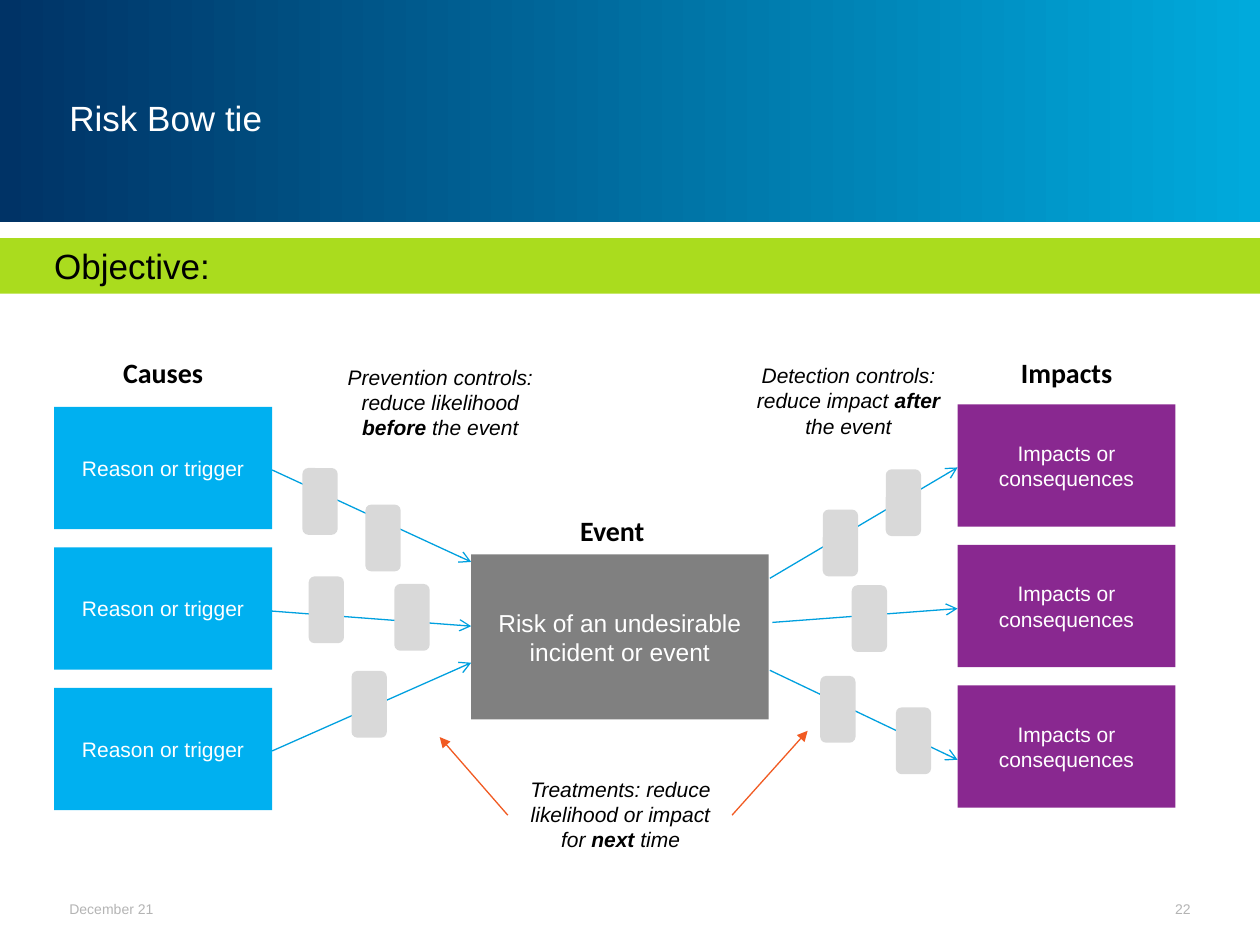
import pptx
import pptx.dml.color
import pptx.enum.shapes
import pptx.enum.text
import pptx.oxml
import pptx.oxml.ns
import pptx.util
from pptx.util import Inches

COLORS = {
    "navy": "003366", "sky": "00AADC", "lime": "AADC1E", "cause": "00B0F0",
    "impact": "892890", "event": "808080", "control": "D9D9D9", "flow": "00A0DF",
    "treatment": "F15A22", "footer": "B4B4B4", "white": "FFFFFF", "black": "000000",
}
ALIGN = pptx.enum.text.PP_ALIGN
ANCHOR = pptx.enum.text.MSO_ANCHOR
SHAPE = pptx.enum.shapes.MSO_SHAPE


def rgb(name):
    return pptx.dml.color.RGBColor.from_string(COLORS[name])


def write_text(shape, text, size=12, color="black", font="Arial", bold=False, italic=False,
               align=ALIGN.LEFT, anchor=ANCHOR.TOP, insets=(0.1, 0.05, 0.1, 0.05)):
    frame = shape.text_frame
    frame.word_wrap = True
    frame.vertical_anchor = anchor
    (frame.margin_left, frame.margin_top,
     frame.margin_right, frame.margin_bottom) = map(Inches, insets)
    paragraph = frame.paragraphs[0]
    paragraph.alignment = align
    for index, part in enumerate(text.split("*")):
        run = paragraph.add_run()
        run.text = part
        run.font.name = font
        run.font.size = pptx.util.Pt(size)
        run.font.bold = bold or index % 2 == 1
        run.font.italic = italic
        run.font.color.rgb = rgb(color)


class SlideBuilder:
    control_width = 0.28
    control_height = 0.53
    line_width = 0.75

    def __init__(self, slide):
        self.slide = slide

    def block(self, left, top, width, height, fill, kind=SHAPE.RECTANGLE):
        shape = self.slide.shapes.add_shape(
            kind, Inches(left), Inches(top), Inches(width), Inches(height))
        shape.shadow.inherit = False
        shape.line.fill.background()
        shape.fill.solid()
        shape.fill.fore_color.rgb = rgb(fill)
        return shape

    def banner(self, left, top, width, height, colors):
        shape = self.block(left, top, width, height, colors[0])
        shape.fill.gradient()
        shape.fill.gradient_angle = 0
        for position, (stop, color) in enumerate(zip(shape.fill.gradient_stops, colors)):
            stop.position = position
            stop.color.rgb = rgb(color)

    def label(self, left, top, width, height, text, **style):
        box = self.slide.shapes.add_textbox(
            Inches(left), Inches(top), Inches(width), Inches(height))
        write_text(box, text, **style)

    def heading(self, left, top, width, text):
        self.label(left, top, width, 0.37, text, size=16, font="Calibri", bold=True,
                   align=ALIGN.CENTER)

    def note(self, left, top, width, text):
        self.label(left, top, width, 0.71, text, italic=True, align=ALIGN.CENTER)

    def small_text(self, left, top, width, height, text, **style):
        self.label(left, top, width, height, text, anchor=ANCHOR.MIDDLE,
                   insets=(0.04,) * 4, **style)

    def control(self, center_x, center_y):
        self.block(center_x - self.control_width / 2, center_y - self.control_height / 2,
                   self.control_width, self.control_height, "control",
                   SHAPE.ROUNDED_RECTANGLE)

    def arrow(self, start, end, color, head):
        connector = self.slide.shapes.add_connector(
            pptx.enum.shapes.MSO_CONNECTOR.STRAIGHT, *map(Inches, start + end))
        connector.line.color.rgb = rgb(color)
        connector.line.width = pptx.util.Pt(self.line_width)
        properties = connector._element.spPr
        tail = pptx.oxml.parse_xml(
            f'<a:tailEnd {pptx.oxml.ns.nsdecls("a")} type="{head}"/>')
        properties.find(pptx.oxml.ns.qn("a:ln")).append(tail)
        properties.append(pptx.oxml.parse_xml(
            f'<a:effectLst {pptx.oxml.ns.nsdecls("a")}/>'))

    def column(self, left, top, text, fill):
        for row in range(3):
            shape = self.block(left, top + row * 1.115, 1.73, 0.97, fill)
            write_text(shape, text, color="white", align=ALIGN.CENTER,
                       anchor=ANCHOR.MIDDLE, insets=(0.1, 0.08, 0.1, 0.08))


def main():
    presentation = pptx.Presentation()
    presentation.slide_width = Inches(10)
    presentation.slide_height = Inches(7.5)
    builder = SlideBuilder(presentation.slides.add_slide(presentation.slide_layouts[6]))

    builder.banner(0, 0, 10, 1.76, ("navy", "sky"))
    builder.small_text(0.51, 0.3, 7.48, 1.26, "Risk Bow tie", size=20, color="white")
    objective = builder.block(0, 1.89, 10, 0.44, "lime")
    write_text(objective, "Objective:", size=20, insets=(0.43, 0.05, 0.1, 0.05))

    flows = [
        ((2.16, 3.73), (3.74, 4.46)), ((2.16, 4.85), (3.74, 4.97)),
        ((2.16, 5.96), (3.74, 5.26)), ((6.11, 4.59), (7.6, 3.71)),
        ((6.13, 4.94), (7.6, 4.83)), ((6.11, 5.32), (7.6, 6.03)),
    ]
    for start, end in flows:
        builder.arrow(start, end, "flow", "arrow")

    builder.column(0.43, 3.23, "Reason or trigger", "cause")
    builder.column(7.6, 3.21, "Impacts or consequences", "impact")
    event = builder.block(3.74, 4.4, 2.36, 1.31, "event")
    write_text(event, "Risk of an undesirable incident or event", size=14, color="white",
               align=ALIGN.CENTER, anchor=ANCHOR.MIDDLE, insets=(0, 0, 0, 0))

    builder.heading(0.63, 2.77, 1.33, "Causes")
    builder.heading(7.77, 2.77, 1.39, "Impacts")
    builder.heading(4.33, 4.03, 1.06, "Event")

    prevention_controls = [(2.54, 3.98), (3.04, 4.27), (2.59, 4.84), (2.93, 5.59), (3.27, 4.9)]
    detection_controls = [(6.67, 4.31), (6.65, 5.63), (6.9, 4.91), (7.25, 5.88), (7.17, 3.99)]
    for center in prevention_controls + detection_controls:
        builder.control(*center)

    builder.note(2.6, 2.84, 1.79,
                 "Prevention controls: reduce likelihood *before* the event")
    builder.note(5.87, 2.83, 1.73, "Detection controls: reduce impact *after* the event")
    builder.note(4.03, 6.11, 1.79,
                 "Treatments: reduce likelihood or impact for *next* time")
    builder.arrow((4.03, 6.47), (3.49, 5.85), "treatment", "triangle")
    builder.arrow((5.81, 6.47), (6.41, 5.8), "treatment", "triangle")

    builder.small_text(0.51, 7.09, 1.57, 0.24, "December 21", size=8, color="footer")
    builder.small_text(8.7, 7.09, 0.79, 0.24, "22", size=8, color="footer",
                       align=ALIGN.RIGHT)
    presentation.save("out.pptx")


if __name__ == "__main__":
    main()
